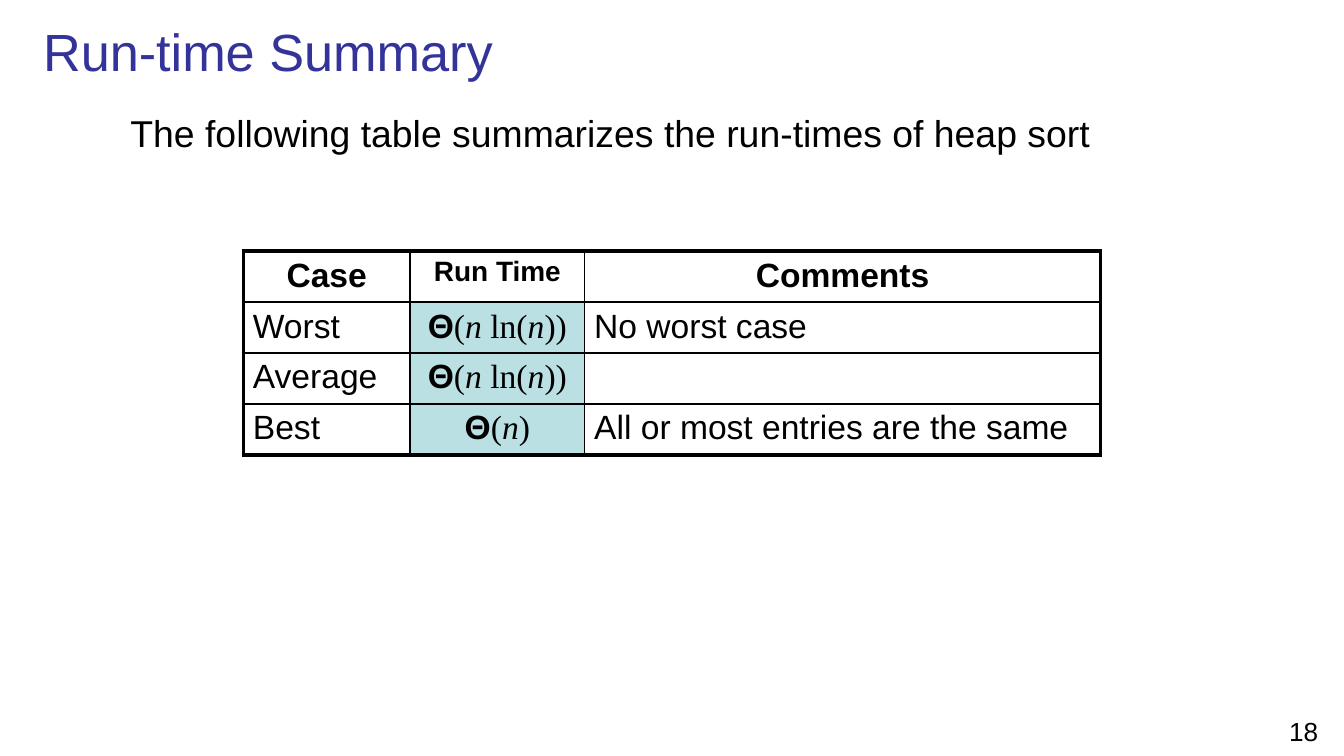
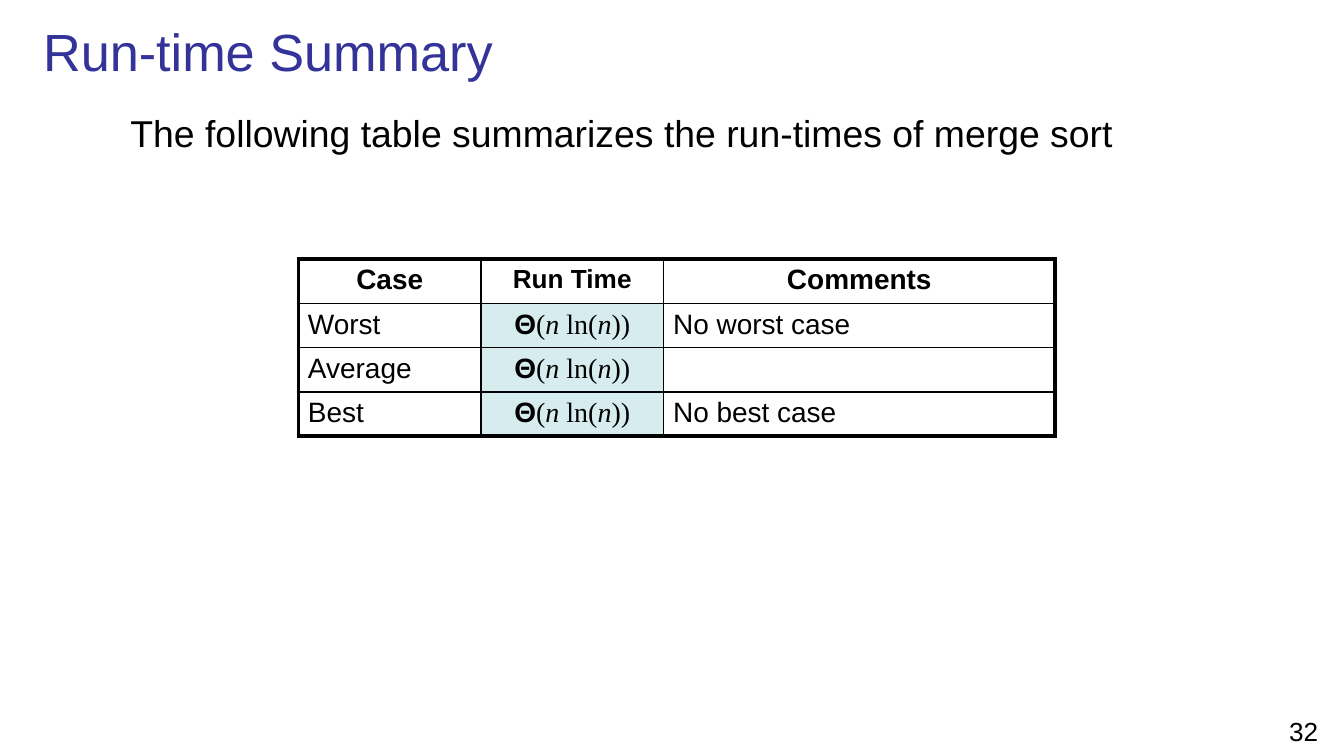
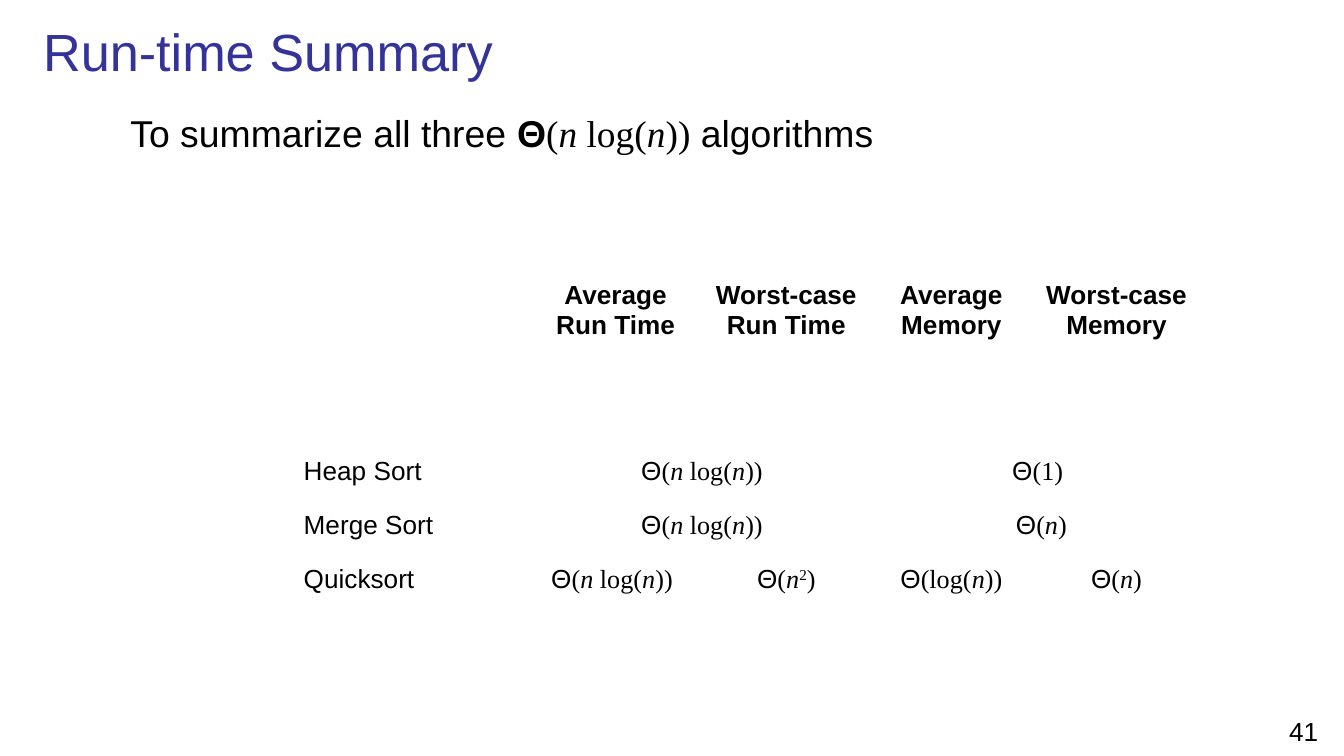
from lxml.etree import SubElement
from pptx import Presentation
from pptx.dml.color import RGBColor
from pptx.enum.text import MSO_ANCHOR, MSO_AUTO_SIZE, PP_ALIGN
from pptx.oxml.ns import qn
from pptx.util import Cm, Pt

COLORS = {"title": "333399", "text": "000000", "heap": "BBE0E3",
          "merge": "D6ECEE", "rule": "000000", "plain": "FFFFFF"}
SANS, SERIF = "Arial", "Times New Roman"
TITLE_BOX = (0.56, 0.2, 24.74, 1.5)
BODY_BOX = (1.12, 1.96, 23.27, 11.13)
NUMBER_BOX = (23.88, 13.39, 1.52, 0.76)
CENTER, LEFT = PP_ALIGN.CENTER, PP_ALIGN.LEFT

N_LN_N = "$Θ|(|n| ln(|n|))$"
N_LOG_N = "$Θ|(|n| log(|n|))$"
LINEAR = "$Θ|(|n|)$"


def rgb(name):
    return RGBColor.from_string(COLORS[name])


def add_run(p, text, size, font=SANS, bold=False, color="text"):
    r = p.add_run()
    r.text = text
    r.font.name, r.font.size, r.font.bold = font, Pt(size), bold
    r.font.color.rgb = rgb(color)
    return r


def add_text(p, text, size, bold=False, bold_theta=True):
    for i, part in enumerate(text.split("$")):
        if i % 2 == 0:
            if part:
                add_run(p, part, size, bold=bold)
            continue
        for token in part.split("|"):
            if token == "Θ":
                add_run(p, token, size, bold=bold_theta)
                continue
            r = add_run(p, token.lstrip("^"), size, SERIF)
            r.font.italic = token == "n"
            if token.startswith("^"):
                r.font._element.set("baseline", "30000")


def space_before(p, percent=20):
    pPr = p._p.get_or_add_pPr()
    spacing = SubElement(pPr, qn("a:spcBef"))
    SubElement(spacing, qn("a:spcPct"), val=str(percent * 1000))
    return pPr


def place(sp, box):
    sp.left, sp.top, sp.width, sp.height = map(Cm, box)
    tf = sp.text_frame
    tf.word_wrap = True
    tf.auto_size = MSO_AUTO_SIZE.NONE
    return tf


def add_slide(prs, number, intro):
    s = prs.slides.add_slide(prs.slide_layouts[1])
    tf = place(s.shapes.title, TITLE_BOX)
    tf.vertical_anchor = MSO_ANCHOR.MIDDLE
    p = tf.paragraphs[0]
    p.alignment = LEFT
    add_run(p, "Run-time Summary", 28, color="title")

    p = place(s.placeholders[1], BODY_BOX).paragraphs[0]
    pPr = space_before(p)
    pPr.set("marL", str(Cm(1.09)))
    pPr.set("indent", "0")
    SubElement(pPr, qn("a:buNone"))
    add_text(p, intro, 20)

    sp = s.shapes.add_textbox(*map(Cm, NUMBER_BOX))
    p = sp.text_frame.paragraphs[0]
    p.alignment = CENTER
    add_run(p, str(number), 14)
    return s


def add_grid(s, left, top, cols, rows):
    gf = s.shapes.add_table(len(rows), len(cols), Cm(left), Cm(top),
                            Cm(sum(cols)), Cm(sum(rows)))
    table = gf.table
    table.first_row = table.horz_banding = False
    for col, width in zip(table.columns, cols):
        col.width = Cm(width)
    for row, height in zip(table.rows, rows):
        row.height = Cm(height)
    return table


def style_cell(cell, color, widths, fill=None):
    cell.margin_left = cell.margin_right = Cm(0.18)
    cell.margin_top = cell.margin_bottom = Cm(0.1)
    tcPr = cell._tc.get_or_add_tcPr()
    for side, width in zip("LRTB", widths):
        ln = SubElement(tcPr, qn("a:ln" + side), w=str(Pt(width)))
        solid = SubElement(ln, qn("a:solidFill"))
        SubElement(solid, qn("a:srgbClr"), val=COLORS[color])
    if fill:
        cell.fill.solid()
        cell.fill.fore_color.rgb = rgb(fill)
    else:
        cell.fill.background()


def add_case_table(s, left, top, cols, row_height, size, time_size, fill, cases):
    rows = [("Case", "Run Time", "Comments")] + cases
    table = add_grid(s, left, top, cols, [row_height] * len(rows))
    last_row, last_col = len(rows) - 1, len(cols) - 1
    for i, row in enumerate(rows):
        for j, text in enumerate(row):
            cell = table.cell(i, j)
            edges = (j == 0, j == last_col, i == 0, i == last_row)
            style_cell(cell, "rule", [2.25 if edge else 1 for edge in edges],
                       fill if i and j == 1 else None)
            p = cell.text_frame.paragraphs[0]
            p.alignment = CENTER if i == 0 or j == 1 else LEFT
            space_before(p)
            if text:
                add_text(p, text, time_size if (i, j) == (0, 1) else size, i == 0)
            else:
                SubElement(p._p, qn("a:endParaRPr"), sz=str(size * 100))


def add_comparison_table(s, left, top, cols, row_heights, rows):
    table = add_grid(s, left, top, cols, row_heights)
    for i, row in enumerate(rows):
        for j, text in enumerate(row):
            cell = table.cell(i, j)
            style_cell(cell, "plain", (1, 1, 3 if i == 1 else 1, 3 if i == 0 else 1))
            if text is None:
                table.cell(i, j - 1).merge(cell)
                continue
            cell.text_frame.text = text
            for p, line in zip(cell.text_frame.paragraphs, text.split("\n")):
                p.clear()
                p.alignment = CENTER if j else LEFT
                add_text(p, line, 14, i == 0, bold_theta=False)


def main():
    prs = Presentation()
    prs.slide_width, prs.slide_height = Cm(25.4), Cm(14.29)

    s = add_slide(prs, 18, "The following table summarizes the run-times of heap sort")
    add_case_table(s, 4.6, 4.75, (3.15, 3.3, 9.75), 0.95, 18, 15, "heap", [
        ("Worst", N_LN_N, "No worst case"),
        ("Average", N_LN_N, ""),
        ("Best", LINEAR, "All or most entries are the same")])

    s = add_slide(prs, 32, "The following table summarizes the run-times of merge sort")
    add_case_table(s, 5.64, 4.9, (3.45, 3.45, 7.4), 0.82, 15, 14, "merge", [
        ("Worst", N_LN_N, "No worst case"),
        ("Average", N_LN_N, ""),
        ("Best", N_LN_N, "No best case")])

    s = add_slide(prs, 41, f"To summarize all three {N_LOG_N} algorithms")
    add_comparison_table(
        s, 5.56, 5.21, (4.55, 3.05, 3.4, 2.84, 3.4), (3.33, 1.02, 1.02, 1.77), [
            ("", "Average\nRun Time", "Worst-case\nRun Time",
             "Average\nMemory", "Worst-case\nMemory"),
            ("Heap Sort", N_LOG_N + " ", None, "$Θ|(1)$ ", None),
            ("Merge Sort", N_LOG_N + " ", None, LINEAR, None),
            ("Quicksort", N_LOG_N + " ", "$Θ|(|n|^2|)$", "$Θ|(log(|n|))$", LINEAR)])

    prs.save("out.pptx")


if __name__ == "__main__":
    main()
